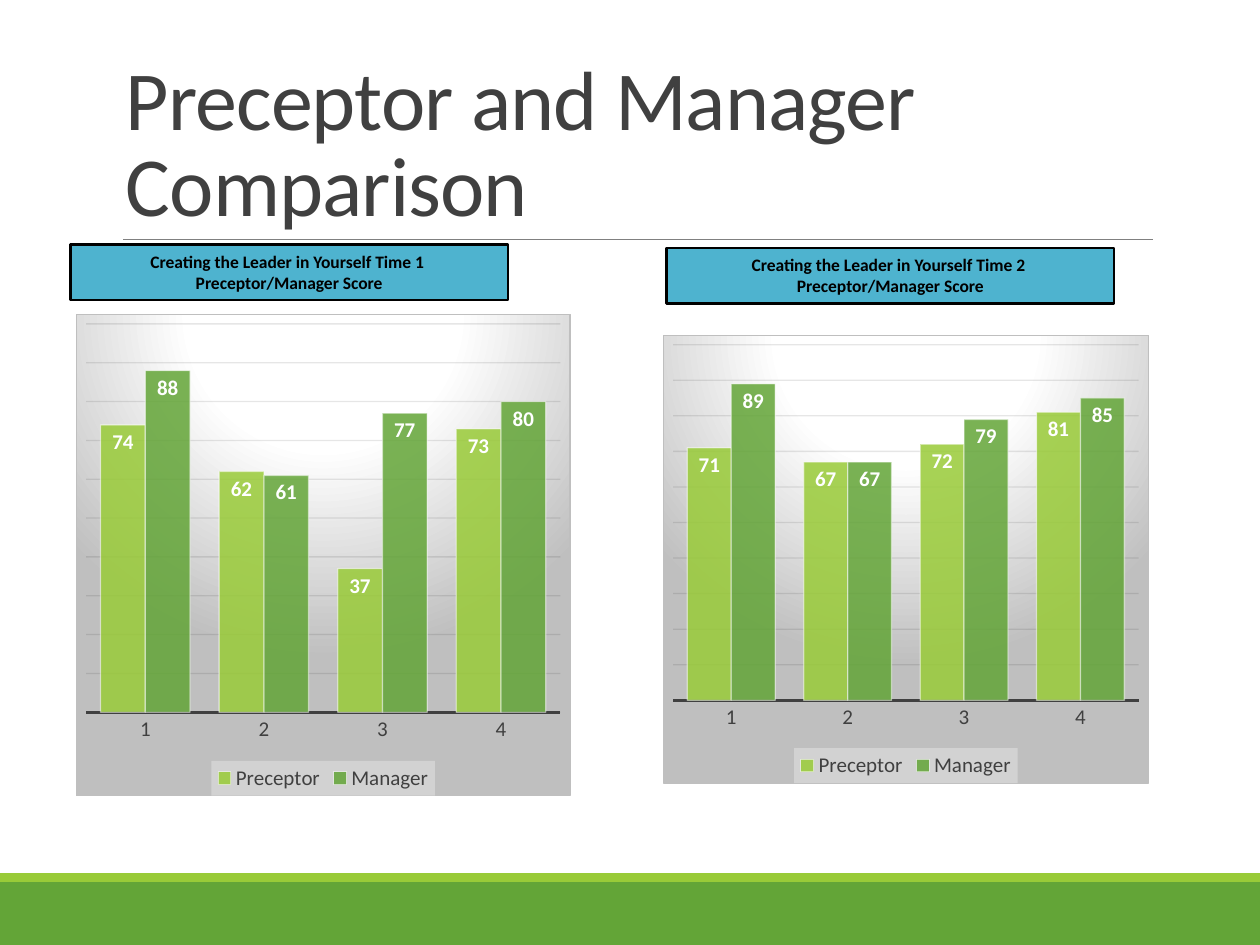
from dataclasses import dataclass
from lxml.etree import SubElement, fromstring
from pptx import Presentation
from pptx.chart.data import CategoryChartData
from pptx.dml.color import RGBColor
from pptx.enum.chart import XL_CHART_TYPE, XL_LABEL_POSITION, XL_LEGEND_POSITION, XL_TICK_LABEL_POSITION, XL_TICK_MARK
from pptx.enum.shapes import MSO_CONNECTOR, MSO_SHAPE
from pptx.enum.text import MSO_ANCHOR, PP_ALIGN
from pptx.oxml.ns import nsdecls, qn
from pptx.util import Inches, Pt

WIDTH, HEIGHT = 10, 7.5
FONT, INK, GREY = "Calibri", "404040", "BFBFBF"
SERIES_COLORS = {"Preceptor": "99CB38", "Manager": "63A537"}


@dataclass
class Box:
    """Area in percent of the slide's width and height."""
    left: float
    top: float
    width: float
    height: float

    def emu(self) -> tuple:
        return (Inches(self.left * WIDTH / 100), Inches(self.top * HEIGHT / 100),
                Inches(self.width * WIDTH / 100), Inches(self.height * HEIGHT / 100))


@dataclass
class Panel:
    """One survey time: its caption and its scores."""
    time: int
    caption: Box
    chart: Box
    scores: dict


PANELS = [
    Panel(1, Box(5.6, 25.87, 34.7, 5.87), Box(6, 33.2, 39.3, 51.07),
          {"Preceptor": (74, 62, 37, 73), "Manager": (88, 61, 77, 80)}),
    Panel(2, Box(52.9, 26.27, 35.5, 5.87), Box(52.6, 35.47, 38.6, 47.47),
          {"Preceptor": (71, 67, 72, 81), "Manager": (89, 67, 79, 85)}),
]


def paint(fill, color: str, alpha: int = 100) -> None:
    """Set a solid fill, with opacity in percent."""
    fill.solid()
    fill.fore_color.rgb = RGBColor.from_string(color)
    if alpha < 100:
        clr = fill._xPr.find(".//" + qn("a:srgbClr"))
        SubElement(clr, qn("a:alpha"), val=str(alpha * 1000))


def draw_line(line, color: str, width: float, alpha: int = 100) -> None:
    """Set a line's colour, width and opacity."""
    paint(line.fill, color, alpha)
    line.width = Pt(width)


def style_font(font, size: float, color: str, bold: bool = False) -> None:
    """Set a font's face, size, colour and weight."""
    font.name, font.size, font.bold = FONT, Pt(size), bold
    paint(font.fill, color)


def write(tf, text: str, *, size: float, color: str, bold: bool = False, align=PP_ALIGN.LEFT,
          anchor=MSO_ANCHOR.TOP, leading: float = 1.0, spacing: int = 0) -> None:
    """Write one paragraph for each line of text."""
    tf.word_wrap, tf.vertical_anchor = True, anchor
    for i, line in enumerate(text.split("\n")):
        p = tf.add_paragraph() if i else tf.paragraphs[0]
        p.alignment, p.line_spacing = align, leading
        r = p.add_run()
        r.text = line
        style_font(r.font, size, color, bold)
        if spacing:
            r.font._element.set("spc", str(spacing))


def add_rect(s, box: Box, color: str, border: float = 0):
    """Add a flat rectangle with an optional black border."""
    sp = s.shapes.add_shape(MSO_SHAPE.RECTANGLE, *box.emu())
    sp.shadow.inherit = False
    paint(sp.fill, color)
    if border:
        draw_line(sp.line, "000000", border)
    else:
        sp.line.fill.background()
    return sp


def add_rule(s, box: Box) -> None:
    """Add the thin rule under the title."""
    left, top, width, height = box.emu()
    cx = s.shapes.add_connector(MSO_CONNECTOR.STRAIGHT, left, top, left + width, top + height)
    draw_line(cx.line, "808080", 0.5)
    SubElement(cx._element.spPr, qn("a:effectLst"))


def add_backgrounds(chart) -> None:
    """Give the chart its radial gradient and the legend its pale fill."""
    stops = "".join(f'<a:gs pos="{pos}000"><a:srgbClr val="{color}"/></a:gs>'
                    for pos, color in ((0, "FFFFFF"), (39, "FFFFFF"), (100, GREY)))
    gradient = (f'<a:gradFill><a:gsLst>{stops}</a:gsLst><a:path path="circle">'
                '<a:fillToRect l="50000" t="-80000" r="50000" b="180000"/></a:path></a:gradFill>'
                f'<a:ln w="9525"><a:solidFill><a:srgbClr val="{GREY}"/></a:solidFill></a:ln>')
    pale = '<a:solidFill><a:srgbClr val="F2F2F2"><a:alpha val="39000"/></a:srgbClr></a:solidFill>'
    area, legend = (fromstring(f'<c:spPr {nsdecls("c", "a")}>{body}</c:spPr>')
                    for body in (gradient, pale))
    chart._chartSpace.find(qn("c:chart")).addnext(area)
    chart.legend._element.find(qn("c:txPr")).addprevious(legend)


def add_scores(s, panel: Panel) -> None:
    """Add the clustered columns of one panel."""
    data = CategoryChartData()
    data.categories = ["1", "2", "3", "4"]
    for name, values in panel.scores.items():
        data.add_series(name, values)
    chart = s.shapes.add_chart(XL_CHART_TYPE.COLUMN_CLUSTERED, *panel.chart.emu(), data).chart
    style_font(chart.font, 10, "000000")
    chart.has_title, chart.has_legend = False, True
    chart.legend.position = XL_LEGEND_POSITION.BOTTOM
    chart.legend.include_in_layout = False
    style_font(chart.legend.font, 12, INK)
    cat, val = chart.category_axis, chart.value_axis
    cat.major_tick_mark = cat.minor_tick_mark = XL_TICK_MARK.NONE
    cat.tick_label_position = XL_TICK_LABEL_POSITION.NEXT_TO_AXIS
    style_font(cat.tick_labels.font, 12, INK)
    draw_line(cat.format.line, INK, 1.5)
    val.minimum_scale, val.maximum_scale, val.major_unit = 0, 100, 10
    val.has_major_gridlines, val.visible = True, False
    draw_line(val.major_gridlines.format.line, "0D0D0D", 0.75, 10)
    plot = chart.plots[0]
    plot.gap_width, plot.overlap, plot.vary_by_categories = 65, 0, False
    for series in plot.series:
        paint(series.format.fill, SERIES_COLORS[series.name], 85)
        draw_line(series.format.line, "FFFFFF", 0.75, 50)
        labels = series.data_labels
        labels.show_value, labels.position = True, XL_LABEL_POSITION.INSIDE_END
        style_font(labels.font, 12, "FFFFFF", True)
    add_backgrounds(chart)


def main() -> None:
    """Build the slide."""
    prs = Presentation()
    prs.slide_width, prs.slide_height = Inches(WIDTH), Inches(HEIGHT)
    s = prs.slides.add_slide(prs.slide_layouts[6])
    add_rect(s, Box(0, 93.33, 100, 6.67), SERIES_COLORS["Manager"])
    add_rect(s, Box(0, 92.4, 100, 0.93), SERIES_COLORS["Preceptor"])
    add_rule(s, Box(9.8, 25.33, 81.7, 0))
    title = s.shapes.add_textbox(*Box(9, 4.13, 82.5, 21.2).emu())
    write(title.text_frame, "Preceptor and Manager Comparison", size=48, color=INK,
          anchor=MSO_ANCHOR.BOTTOM, leading=0.85, spacing=-50)
    for panel in PANELS:
        add_scores(s, panel)
    for panel in PANELS:
        sp = add_rect(s, panel.caption, "4EB3CF", 1.25)
        write(sp.text_frame, f"Creating the Leader in Yourself Time {panel.time} \nPreceptor/Manager Score",
              size=10, color="000000", bold=True, align=PP_ALIGN.CENTER)
    prs.save("out.pptx")


if __name__ == "__main__":
    main()
